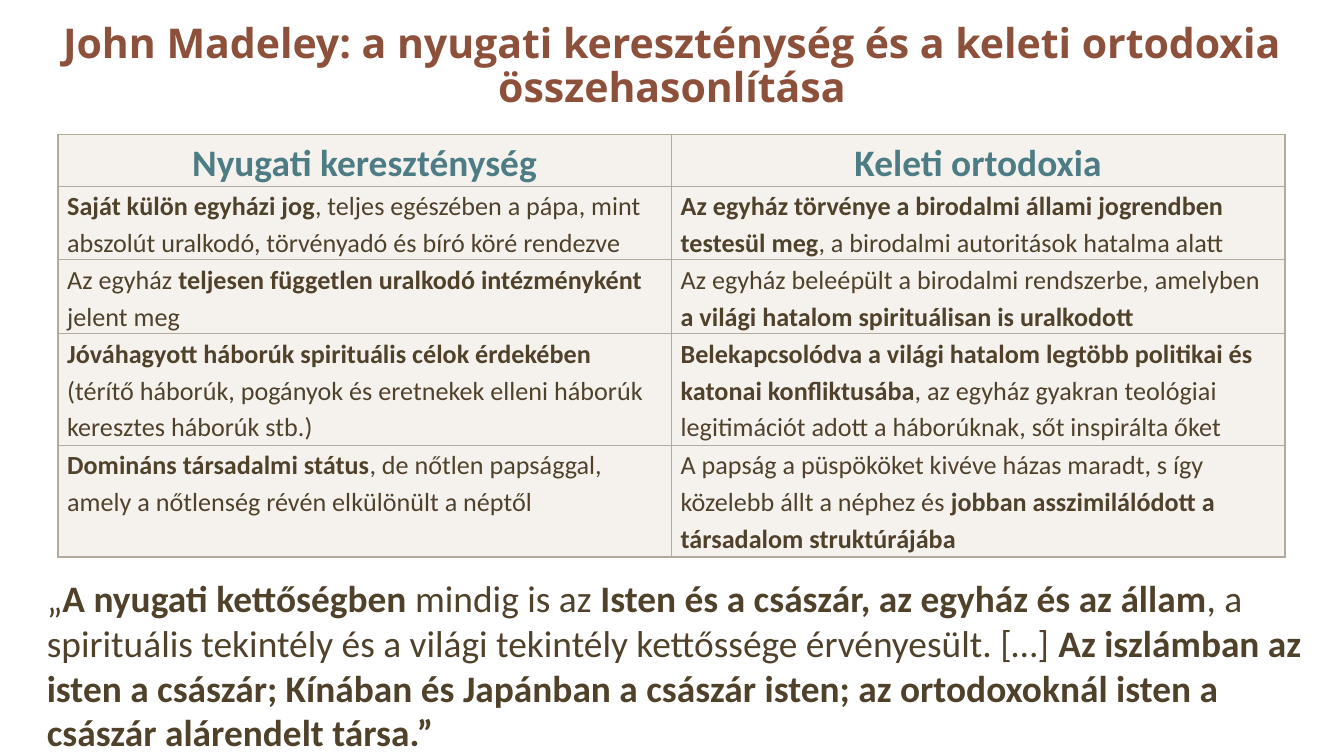
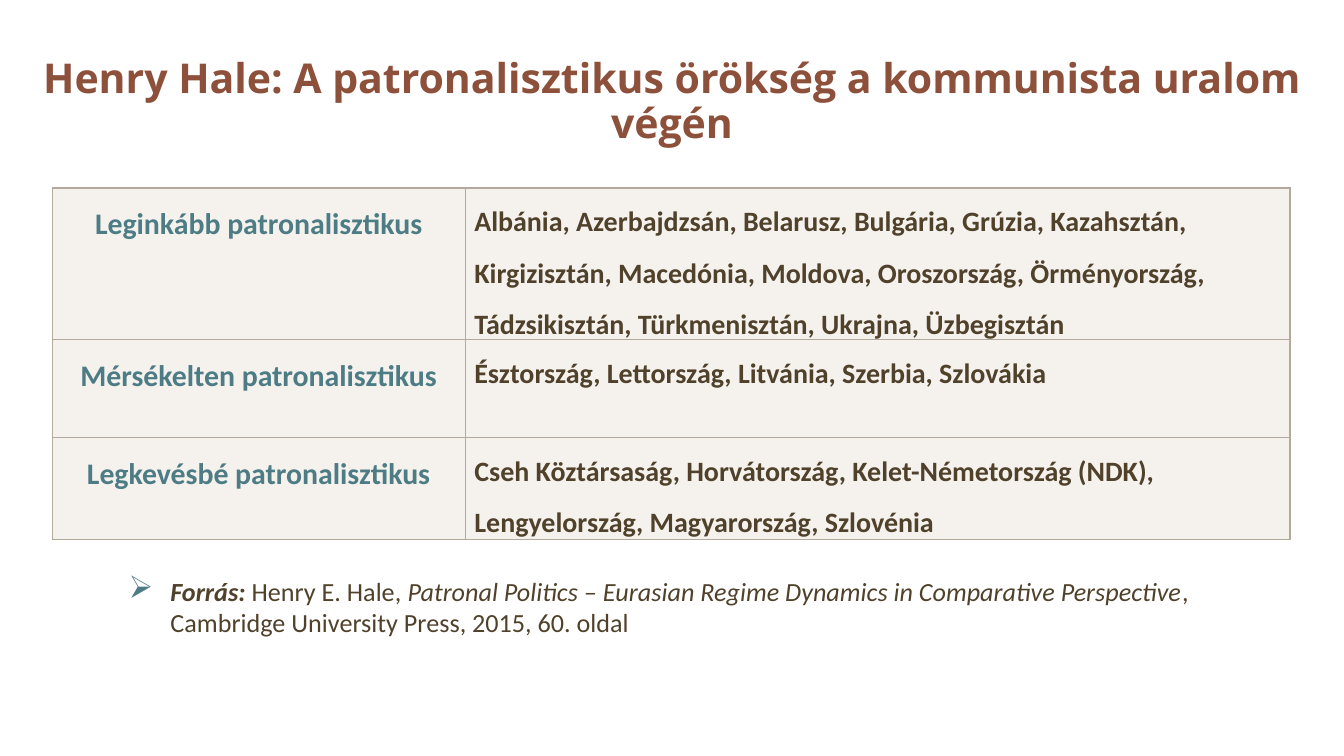
from dataclasses import dataclass, field

from lxml.etree import SubElement
from pptx import Presentation
from pptx.dml.color import RGBColor
from pptx.enum.text import MSO_ANCHOR as Anchor, PP_ALIGN as Align
from pptx.oxml.ns import qn
from pptx.slide import Slide
from pptx.table import _Cell as Cell
from pptx.util import Emu, Pt

PX = 4572  # 200 px to the inch


def px(n: int) -> Emu:
    return Emu(n * PX)


# Theme
@dataclass(frozen=True)
class Theme:
    title_font: str = "Open Sans"
    body_font: str = "Calibri"
    rust: str = "8D503B"
    teal: str = "4D7C85"
    brown: str = "50412B"
    cell_fill: str = "EFEAE4"
    cell_opacity: int = 60
    border: str = "B3A99D"
    outer_pt: float = 1
    inner_pt: float = 0.5
    title_size: int = 22
    large: int = 20
    label: int = 16
    countries: int = 15
    small: int = 14


T = Theme()


@dataclass(frozen=True)
class Run:
    text: str
    bold: bool = False
    italic: bool = False


@dataclass(frozen=True)
class Style:
    size: int
    color: str = T.brown
    font: str = T.body_font
    align: Align = Align.LEFT
    spacing: float = 1.0
    after: int = 0
    indent: int = 0
    bullet: str = ""


@dataclass(frozen=True)
class Box:
    x: int
    y: int
    w: int
    h: int


@dataclass(frozen=True)
class TableCell:
    runs: list[Run]
    style: Style


@dataclass(frozen=True)
class TableSpec:
    x: int
    y: int
    cols: list[int]
    rows: list[int]
    cells: list[list[TableCell]] = field(default_factory=list)


def b(text: str) -> Run:
    return Run(text, bold=True)


TITLE = Style(T.title_size, T.rust, T.title_font, Align.CENTER, spacing=0.9)
HEADING = Style(T.large, T.teal, align=Align.CENTER, spacing=1.15)
COMPARISON = Style(T.small, spacing=1.15)
LABEL = Style(T.label, T.teal, align=Align.CENTER, spacing=1.5)
COUNTRIES = Style(T.countries, spacing=1.5)
QUOTE = Style(T.large, after=8, indent=16)
SOURCE = Style(T.small, indent=62, bullet="➢")


# Text
def write(tf, runs: list[Run], style: Style) -> None:
    p = tf.paragraphs[0]
    p.alignment = style.align
    p.line_spacing = style.spacing
    p.space_after = Pt(style.after)
    pPr = p._p.get_or_add_pPr()
    if style.indent:
        pPr.set("marL", str(px(style.indent)))
        pPr.set("indent", str(-px(style.indent) if style.bullet else 0))
    if style.bullet:
        color = SubElement(pPr, qn("a:buClr"))
        SubElement(color, qn("a:srgbClr"), val=T.teal)
        SubElement(pPr, qn("a:buSzPct"), val="120000")
        SubElement(pPr, qn("a:buChar"), char=style.bullet)
    for run in runs:
        r = p.add_run()
        r.text = run.text
        r.font.name = style.font
        r.font.size = Pt(style.size)
        r.font.bold = run.bold
        r.font.italic = run.italic
        r.font.color.rgb = RGBColor.from_string(style.color)


def add_text(s: Slide, box: Box, runs: list[Run], style: Style,
             anchor: Anchor = Anchor.TOP) -> None:
    sp = s.shapes.add_textbox(px(box.x), px(box.y), px(box.w), px(box.h))
    tf = sp.text_frame
    tf.word_wrap = True
    tf.vertical_anchor = anchor
    write(tf, runs, style)


def add_title(s: Slide, text: str, height: int) -> None:
    add_text(s, Box(24, 0, 1952, height), [b(text)], TITLE, Anchor.MIDDLE)


# Tables
def paint_cell(cell: Cell, outer: dict[str, bool]) -> None:
    tcPr = cell._tc.get_or_add_tcPr()
    for side, is_outer in outer.items():
        width = Pt(T.outer_pt if is_outer else T.inner_pt)
        ln = SubElement(tcPr, qn(f"a:ln{side}"), w=str(width))
        SubElement(SubElement(ln, qn("a:solidFill")), qn("a:srgbClr"), val=T.border)
    cell.fill.solid()
    cell.fill.fore_color.rgb = RGBColor.from_string(T.cell_fill)
    color = tcPr.find(qn("a:solidFill")).find(qn("a:srgbClr"))
    SubElement(color, qn("a:alpha"), val=str(T.cell_opacity * 1000))


def add_grid(s: Slide, spec: TableSpec) -> None:
    n_rows, n_cols = len(spec.rows), len(spec.cols)
    table = s.shapes.add_table(n_rows, n_cols, px(spec.x), px(spec.y),
                               px(sum(spec.cols)), px(sum(spec.rows))).table
    table.first_row = table.horz_banding = False
    for column, width in zip(table.columns, spec.cols):
        column.width = px(width)
    for row, height in zip(table.rows, spec.rows):
        row.height = px(height)
    for i, cells in enumerate(spec.cells):
        for j, content in enumerate(cells):
            cell = table.cell(i, j)
            cell.margin_left = cell.margin_right = px(14)
            cell.margin_top = cell.margin_bottom = 0
            paint_cell(cell, {"L": j == 0, "R": j == n_cols - 1,
                              "T": i == 0, "B": i == n_rows - 1})
            write(cell.text_frame, content.runs, content.style)


# Slide 1 content
CHURCH_HEADINGS = ["Nyugati kereszténység", "Keleti ortodoxia"]
CHURCH_ROWS = [
    ([b("Saját külön egyházi jog"),
      Run(", teljes egészében a pápa, mint abszolút uralkodó, törvényadó és bíró köré rendezve")],
     [b("Az egyház törvénye a birodalmi állami jogrendben testesül meg"),
      Run(", a birodalmi autoritások hatalma alatt")]),
    ([Run("Az egyház "), b("teljesen független uralkodó intézményként "), Run("jelent meg")],
     [Run("Az egyház beleépült a birodalmi rendszerbe, amelyben "),
      b("a világi hatalom spirituálisan is uralkodott")]),
    ([b("Jóváhagyott háborúk spirituális célok érdekében "),
      Run("(térítő háborúk, pogányok és eretnekek elleni háborúk keresztes háborúk stb.)")],
     [b("Belekapcsolódva a világi hatalom legtöbb politikai és katonai konfliktusába"),
      Run(", az egyház gyakran teológiai legitimációt adott a háborúknak, sőt inspirálta őket")]),
    ([b("Domináns társadalmi státus"),
      Run(", de nőtlen papsággal, amely a nőtlenség révén elkülönült a néptől")],
     [Run("A papság a püspököket kivéve házas maradt, s így közelebb állt a néphez és "),
      b("jobban asszimilálódott a társadalom struktúrájába")]),
]
QUOTE_RUNS = [
    Run("„"),
    b("A nyugati kettőségben "),
    Run("mindig is az "),
    b("Isten és a császár, az egyház és az állam"),
    Run(", a spirituális tekintély és a világi tekintély kettőssége érvényesült. […] "),
    b("Az iszlámban az isten a császár; Kínában és Japánban a császár isten; "
      "az ortodoxoknál isten a császár alárendelt társa.”"),
]

# Slide 2 content
PATRONAL_GROUPS = [
    ("Leginkább patronalisztikus",
     "Albánia, Azerbajdzsán, Belarusz, Bulgária, Grúzia, Kazahsztán, Kirgizisztán, "
     "Macedónia, Moldova, Oroszország, Örményország, Tádzsikisztán, Türkmenisztán, "
     "Ukrajna, Üzbegisztán"),
    ("Mérsékelten patronalisztikus",
     "Észtország, Lettország, Litvánia, Szerbia, Szlovákia"),
    ("Legkevésbé patronalisztikus",
     "Cseh Köztársaság, Horvátország, Kelet-Németország (NDK), Lengyelország, "
     "Magyarország, Szlovénia"),
]
SOURCE_RUNS = [
    Run("Forrás: ", bold=True, italic=True),
    Run("Henry E. Hale, "),
    Run("Patronal Politics – Eurasian Regime Dynamics in Comparative Perspective", italic=True),
    Run(", Cambridge University Press, 2015, 60. oldal"),
]


def build_churches(s: Slide) -> None:
    add_title(s, "John Madeley: a nyugati kereszténység és a keleti ortodoxia összehasonlítása", 200)
    cells = [[TableCell([b(text)], HEADING) for text in CHURCH_HEADINGS]]
    cells += [[TableCell(runs, COMPARISON) for runs in row] for row in CHURCH_ROWS]
    add_grid(s, TableSpec(86, 200, [913, 913], [76, 110, 110, 166, 166], cells))
    add_text(s, Box(34, 846, 1938, 279), QUOTE_RUNS, QUOTE)


def build_patronalism(s: Slide) -> None:
    add_title(s, "Henry Hale: A patronalisztikus örökség a kommunista uralom végén", 306)
    cells = [[TableCell([b(label)], LABEL), TableCell([b(names)], COUNTRIES)]
             for label, names in PATRONAL_GROUPS]
    add_grid(s, TableSpec(78, 280, [614, 1228], [216, 146, 152], cells))
    add_text(s, Box(172, 846, 1652, 114), SOURCE_RUNS, SOURCE)


def main() -> None:
    prs = Presentation()
    prs.slide_width, prs.slide_height = px(2000), px(1125)
    for build in (build_churches, build_patronalism):
        build(prs.slides.add_slide(prs.slide_layouts[6]))
    prs.save("out.pptx")


if __name__ == "__main__":
    main()
